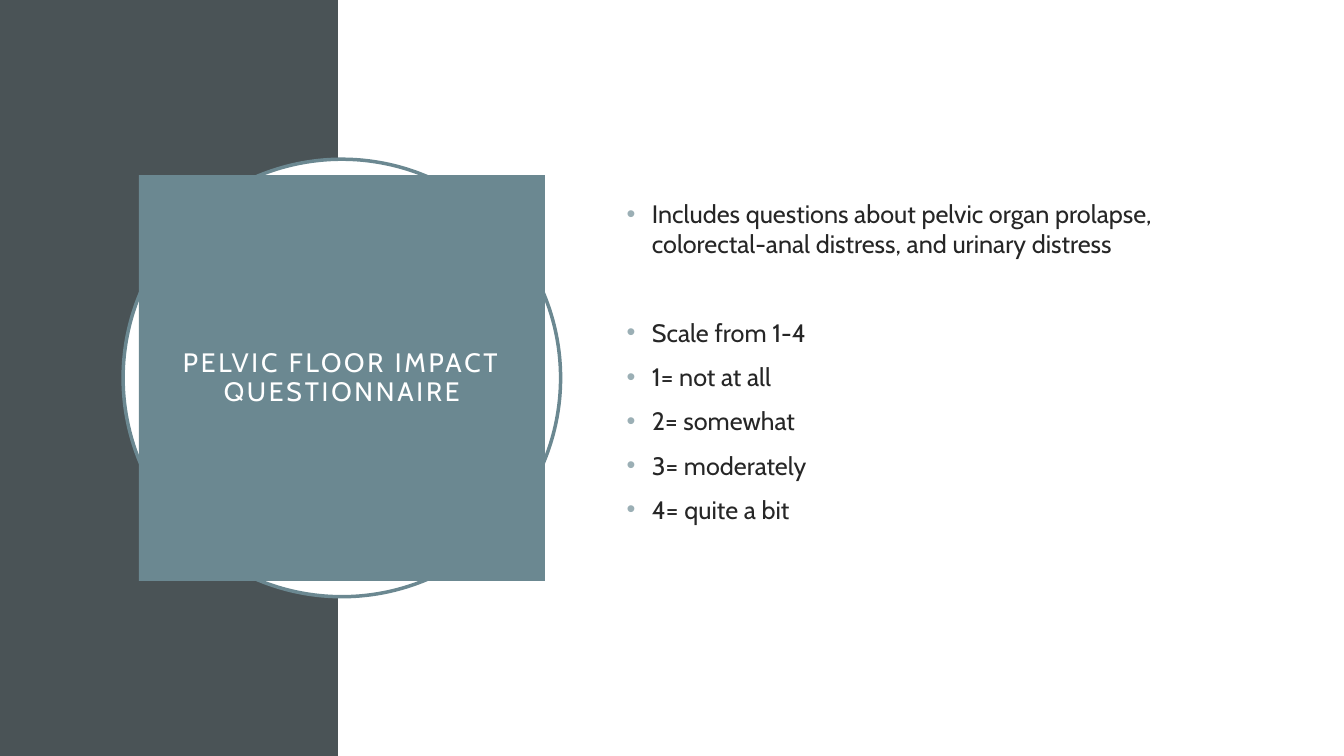
from lxml.etree import SubElement
from pptx import Presentation
from pptx.dml.color import RGBColor
from pptx.enum.shapes import MSO_SHAPE
from pptx.enum.text import MSO_ANCHOR, PP_ALIGN
from pptx.oxml.ns import qn
from pptx.util import Pt

COLORS = {
    "slate": "4A5356",
    "teal": "6B8891",
    "bullet": "9BAFB5",
    "text": "262626",
    "white": "FFFFFF",
}
WIDTH, HEIGHT = 960, 540
BAND_WIDTH = 241.6
CENTER_X, CENTER_Y = 244.2, 270
LINE_GAP = 10
GROUP_GAP = 41.6

BULLET_GROUPS = [
    ["Includes questions about pelvic organ prolapse, "
     "colorectal-anal distress, and urinary distress"],
    ["Scale from 1-4", "1= not at all", "2= somewhat",
     "3= moderately", "4= quite a bit"],
]


class Deck:
    font = "Cabin"

    def __init__(self):
        self.prs = Presentation()
        self.prs.slide_width, self.prs.slide_height = Pt(WIDTH), Pt(HEIGHT)
        self.s = self.prs.slides.add_slide(self.prs.slide_layouts[6])

    def color(self, name):
        return RGBColor.from_string(COLORS[name])

    def shape(self, kind, x, y, w, h, fill, line=None):
        sp = self.s.shapes.add_shape(kind, Pt(x), Pt(y), Pt(w), Pt(h))
        sp.shadow.inherit = False
        sp.fill.solid()
        sp.fill.fore_color.rgb = self.color(fill)
        if line:
            sp.line.color.rgb = self.color(line)
            sp.line.width = Pt(2.5)
        else:
            sp.line.fill.background()
        return sp

    def centered(self, kind, size, fill, line=None):
        """Add a shape of equal sides around the title centre."""
        return self.shape(kind, CENTER_X - size / 2, CENTER_Y - size / 2,
                          size, size, fill, line)

    def run(self, p, text, size, color):
        r = p.add_run()
        r.text = text
        r.font.name = self.font
        r.font.size = Pt(size)
        r.font.color.rgb = self.color(color)
        return r

    def title(self, sp, text):
        tf = sp.text_frame
        tf.word_wrap = True
        tf.vertical_anchor = MSO_ANCHOR.MIDDLE
        tf.margin_left = tf.margin_right = Pt(14.4)
        tf.margin_top = tf.margin_bottom = Pt(14.4)
        p = tf.paragraphs[0]
        p.alignment = PP_ALIGN.CENTER
        p.line_spacing = 0.9
        r = self.run(p, text, 19, "white")
        r.font._element.set("spc", "200")

    def bullet(self, p):
        pPr = p._p.get_or_add_pPr()
        pPr.set("marL", str(Pt(18)))
        pPr.set("indent", str(-Pt(18)))
        clr = SubElement(pPr, qn("a:buClr"))
        SubElement(clr, qn("a:srgbClr"), val=COLORS["bullet"])
        SubElement(pPr, qn("a:buFont"), typeface="Arial")
        SubElement(pPr, qn("a:buChar"), char="•")

    def bullets(self, groups, x, y, w, h):
        tf = self.s.shapes.add_textbox(Pt(x), Pt(y), Pt(w), Pt(h)).text_frame
        tf.word_wrap = True
        tf.vertical_anchor = MSO_ANCHOR.TOP
        tf.margin_top = Pt(31.5)
        p = None
        for group in groups:
            for i, text in enumerate(group):
                if p is None:
                    p = tf.paragraphs[0]
                else:
                    p = tf.add_paragraph()
                    p.space_before = Pt(LINE_GAP if i else GROUP_GAP)
                self.bullet(p)
                self.run(p, text, 18, "text")


def main():
    deck = Deck()
    deck.shape(MSO_SHAPE.RECTANGLE, 0, 0, BAND_WIDTH, HEIGHT, "slate")
    deck.shape(MSO_SHAPE.RECTANGLE, BAND_WIDTH, 0, WIDTH - BAND_WIDTH, HEIGHT, "white")
    deck.centered(MSO_SHAPE.OVAL, 312.5, "white", "teal")
    panel = deck.centered(MSO_SHAPE.RECTANGLE, 290, "teal")
    deck.title(panel, "PELVIC FLOOR IMPACT QUESTIONNAIRE")
    deck.bullets(BULLET_GROUPS, 440.6, 110.2, 419, 319)
    deck.prs.save("out.pptx")


if __name__ == "__main__":
    main()
